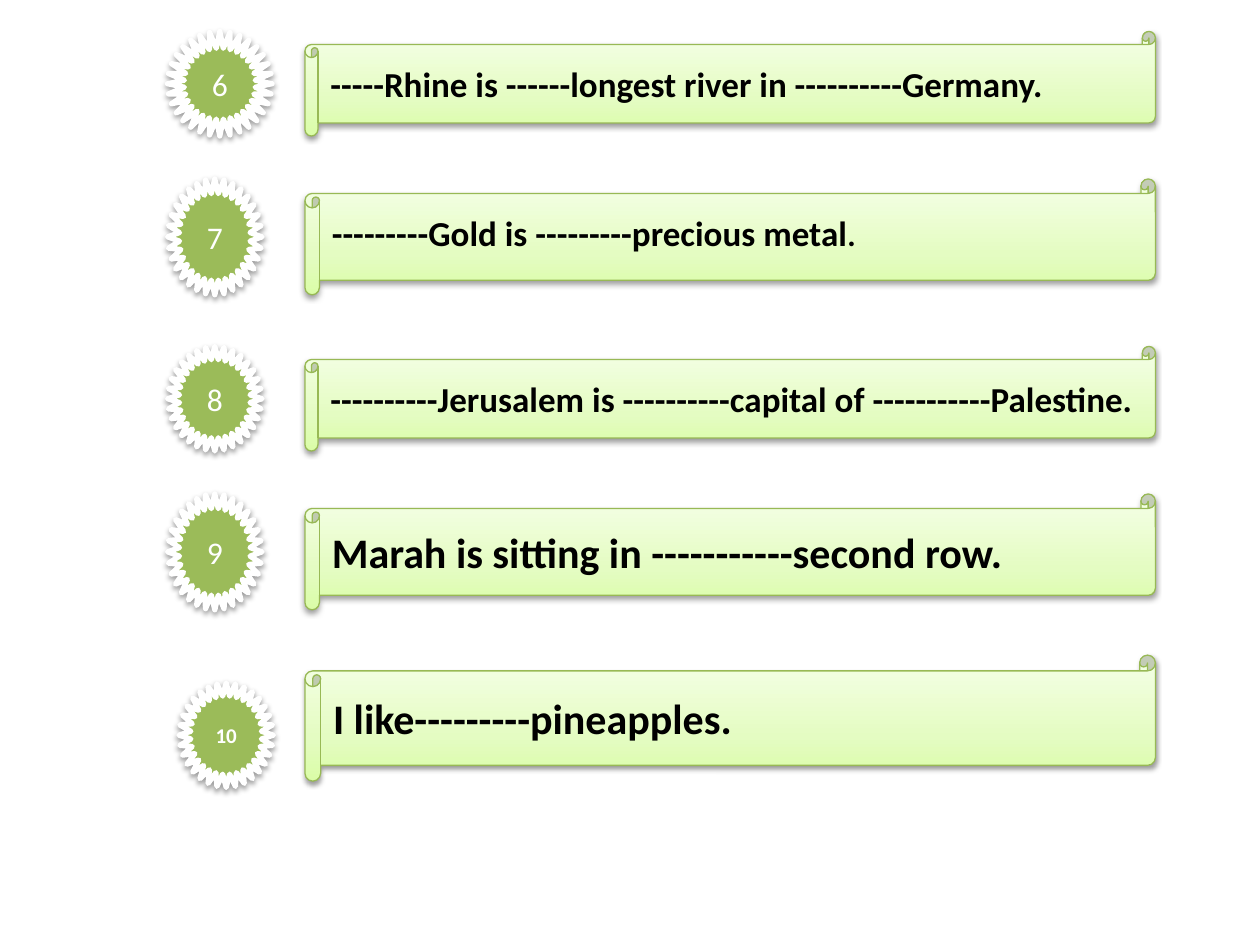
from copy import deepcopy
from lxml.etree import SubElement
from pptx import Presentation
from pptx.dml.color import RGBColor
from pptx.enum.shapes import MSO_SHAPE
from pptx.enum.text import MSO_ANCHOR, PP_ALIGN
from pptx.oxml.ns import qn
from pptx.util import Inches, Pt

BLACK = RGBColor(0x00, 0x00, 0x00)
WHITE = RGBColor(0xFF, 0xFF, 0xFF)
GREEN = RGBColor(0x9B, 0xBB, 0x59)
EDGE = RGBColor(0x98, 0xB9, 0x55)
LIME = RGBColor(0xDA, 0xFD, 0xA7)
PALE = RGBColor(0xE4, 0xFC, 0xC2)
CREAM = RGBColor(0xF5, 0xFF, 0xE7)

LEFT, WIDTH = 2.42, 6.75

ROWS = [
    ("6", [("-----Rhine is ------longest river in ----------Germany.", 20)],
     0.25, 0.83, (1.33, 0.25, 0.83, 0.83), {"adj": 0.34}, {}),
    ("7", [("---------Gold is ---------precious metal", 20), (".", 18)],
     1.42, 0.92, (1.33, 1.42, 0.75, 0.92), {}, {"gap": 0.8}),
    ("8", [("----------Jerusalem is ----------capital of -----------Palestine.", 20)],
     2.75, 0.83, (1.33, 2.75, 0.75, 0.83), {}, {}),
    ("9", [("Marah is sitting in -----------second row.", 24)],
     3.92, 0.92, (1.33, 3.92, 0.75, 0.92), {}, {}),
    ("10", [("I like---------pineapples.", 24)],
     5.2, 1, (1.42, 5.42, 0.75, 0.83), {"size": 12, "bold": True}, {}),
]


def write(shape, runs, color=BLACK, bold=False, align=PP_ALIGN.LEFT, gap=None, wrap=True):
    frame = shape.text_frame
    frame.word_wrap = wrap
    frame.vertical_anchor = MSO_ANCHOR.MIDDLE
    para = frame.paragraphs[0]
    para.alignment = align
    if gap:
        para.line_spacing = gap
    for text, size in runs:
        run = para.add_run()
        run.text = text
        font = run.font
        font.name, font.size, font.bold = "Calibri", Pt(size), bold
        font.color.rgb = color


def shade(shape):
    shape.shadow.inherit = False
    effects = shape._element.spPr.find(qn("a:effectLst"))
    drop = SubElement(effects, qn("a:outerShdw"), blurRad=str(Pt(3.1)),
                      dist=str(Pt(1.6)), dir="5400000", rotWithShape="0")
    tint = SubElement(drop, qn("a:srgbClr"), val=str(BLACK))
    SubElement(tint, qn("a:alpha"), val="38000")


def blend(fill):
    fill.gradient()
    fill.gradient_angle = 90
    first = fill.gradient_stops[0]._gs
    first.addnext(deepcopy(first))
    for stop, place, color in zip(fill.gradient_stops, (0, 0.35, 1), (LIME, PALE, CREAM)):
        stop.position = place
        stop.color.rgb = color


def draw(slide, kind, box, edge, width):
    shape = slide.shapes.add_shape(kind, *map(Inches, box))
    shape.line.color.rgb = edge
    shape.line.width = Pt(width)
    shade(shape)
    return shape


def scroll(slide, box, runs, gap=None):
    shape = draw(slide, MSO_SHAPE.HORIZONTAL_SCROLL, box, EDGE, 0.75)
    blend(shape.fill)
    write(shape, runs, bold=True, gap=gap)


def badge(slide, box, label, size=18, bold=False, adj=None):
    shape = draw(slide, MSO_SHAPE.STAR_32_POINT, box, WHITE, 3)
    shape.fill.solid()
    shape.fill.fore_color.rgb = GREEN
    if adj:
        shape.adjustments[0] = adj
    write(shape, [(label, size)], color=WHITE, bold=bold, align=PP_ALIGN.CENTER, wrap=False)


def main():
    deck = Presentation()
    deck.slide_width, deck.slide_height = Inches(10), Inches(7.5)
    slide = deck.slides.add_slide(deck.slide_layouts[6])
    for label, runs, top, height, spot, look, style in ROWS:
        scroll(slide, (LEFT, top, WIDTH, height), runs, **style)
        badge(slide, spot, label, **look)
    deck.save("out.pptx")


if __name__ == "__main__":
    main()
